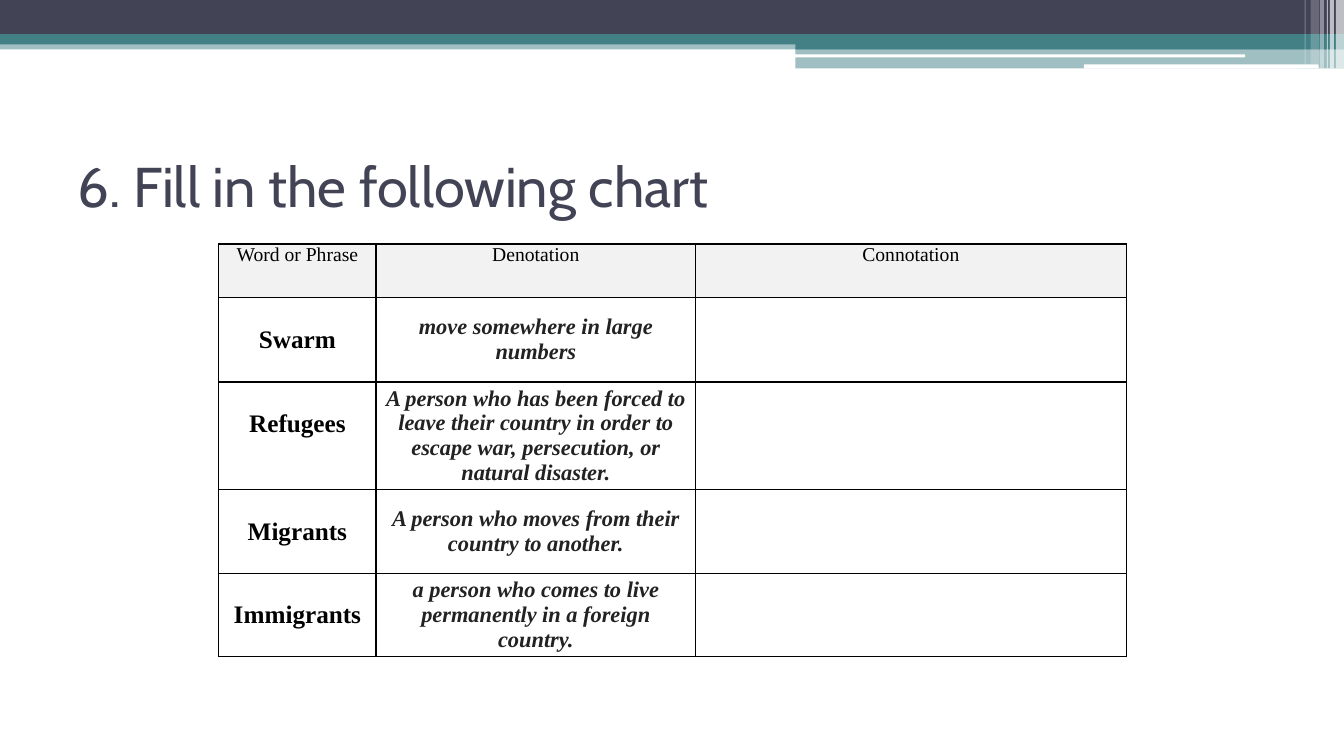
from lxml import etree
from pptx import Presentation
from pptx.dml.color import RGBColor
from pptx.enum.shapes import MSO_SHAPE
from pptx.enum.text import MSO_ANCHOR, PP_ALIGN
from pptx.oxml.ns import qn
from pptx.util import Inches, Pt

RECT, ROUNDED = MSO_SHAPE.RECTANGLE, MSO_SHAPE.ROUNDED_RECTANGLE
TOP, MIDDLE = MSO_ANCHOR.TOP, MSO_ANCHOR.MIDDLE
CENTER = PP_ALIGN.CENTER

GRID = Inches(0.01)
COLUMNS, ROWS = 1333, 750
COLORS = {"navy": "424456", "teal": "438086", "white": "FFFFFF",
          "black": "000000", "ink": "222222", "header": "F2F2F2"}
HEADING_FONT, TABLE_FONT = "Cabin", "Times New Roman"

STRIPES = [
    (0, 40, 1333, 9, "teal", 50),
    (0, 0, 1333, 34, "navy", 100),
    (0, 34, 1333, 10, "teal", 100),
    (789, 39, 544, 10, "teal", 100),
    (789, 48, 544, 20, "teal", 50),
]
HIGHLIGHTS = [(788, 54, 447, 3, "white", 100), (1075, 64, 233, 4, "white", 100)]
GLINTS = [(1325, 8, 68, 65), (1319, 4, 68, 65), (1316, 1, 68, 60),
          (1309, 4, 68, 40), (1300, 8, 64, 20), (1294, 1, 64, 30)]

HEADERS = ["Word or Phrase", "Denotation", "Connotation"]
VOCABULARY = [
    ("Swarm", "move somewhere in large numbers"),
    ("Refugees", "A person who has been forced to leave their country in order "
                 "to escape war, persecution, or natural disaster."),
    ("Migrants", "A person who moves from their country to another."),
    ("Immigrants", "a person who comes to live permanently in a foreign country."),
]
COLUMN_WIDTHS = [156, 317, 427]
ROW_HEIGHTS = [53, 84, 99, 83, 83]


def rgb(name):
    return RGBColor.from_string(COLORS[name])


def style(paragraph, font_name, size, color, bold=False, italic=False):
    font = paragraph.font
    font.name, font.size = font_name, Pt(size)
    font.bold, font.italic = bold, italic
    font.color.rgb = rgb(color)


def add_bar(slide, preset, left, top, width, height, color, opacity):
    bar = slide.shapes.add_shape(
        preset, left * GRID, top * GRID, width * GRID, height * GRID)
    bar.shadow.inherit = False
    bar.line.fill.background()
    bar.fill.solid()
    bar.fill.fore_color.rgb = rgb(color)
    if opacity < 100:
        tint = bar.fill._xPr.find(qn("a:solidFill"))[0]
        etree.SubElement(tint, qn("a:alpha"), val=str(opacity * 1000))


def add_banner(slide, left, top):
    glints = [(x, 0, width, height, "white", opacity)
              for x, width, height, opacity in GLINTS]
    for preset, bars in ((RECT, STRIPES), (ROUNDED, HIGHLIGHTS), (RECT, glints)):
        for x, y, *look in bars:
            add_bar(slide, preset, left + x, top + y, *look)


def add_heading(slide, left, top, width, height):
    heading = slide.shapes.add_textbox(
        left * GRID, top * GRID, width * GRID, height * GRID).text_frame
    heading.word_wrap = True
    heading.vertical_anchor = MIDDLE
    heading.text = "6. Fill in the following chart"
    style(heading.paragraphs[0], HEADING_FONT, 40, "navy")


def add_borders(cell):
    properties = cell._tc.get_or_add_tcPr()
    for side in ("lnL", "lnR", "lnT", "lnB"):
        edge = etree.SubElement(properties, qn(f"a:{side}"), w=str(Pt(1)))
        ink = etree.SubElement(edge, qn("a:solidFill"))
        etree.SubElement(ink, qn("a:srgbClr"), val=COLORS["black"])


def fill_cell(cell, text, anchor, margin_top, **look):
    cell.margin_left = cell.margin_right = 7 * GRID
    cell.margin_top, cell.margin_bottom = margin_top * GRID, 0
    cell.vertical_anchor = anchor
    cell.text = text
    paragraph = cell.text_frame.paragraphs[0]
    paragraph.alignment = CENTER
    style(paragraph, TABLE_FONT, **look)


def add_vocabulary(slide, left, top):
    table = slide.shapes.add_table(
        len(ROW_HEIGHTS), len(COLUMN_WIDTHS), left * GRID, top * GRID,
        sum(COLUMN_WIDTHS) * GRID, sum(ROW_HEIGHTS) * GRID).table
    table.first_row = table.horz_banding = False
    for column, width in zip(table.columns, COLUMN_WIDTHS):
        column.width = width * GRID
    for row, height in zip(table.rows, ROW_HEIGHTS):
        row.height = height * GRID
    for cell in table.iter_cells():
        add_borders(cell)
        cell.fill.background()
    for column, header in enumerate(HEADERS):
        cell = table.cell(0, column)
        cell.fill.solid()
        cell.fill.fore_color.rgb = rgb("header")
        fill_cell(cell, header, TOP, 0, size=14, color="black")
    for row, (word, denotation) in enumerate(VOCABULARY, start=1):
        fill_cell(table.cell(row, 0), word, TOP, 28,
                  size=18, color="black", bold=True)
        fill_cell(table.cell(row, 1), denotation, MIDDLE, 0,
                  size=16, color="ink", bold=True, italic=True)


def main():
    deck = Presentation()
    deck.slide_width, deck.slide_height = COLUMNS * GRID, ROWS * GRID
    slide = deck.slides.add_slide(deck.slide_layouts[6])
    add_banner(slide, 0, 0)
    add_heading(slide, 67, 125, 1200, 117)
    add_vocabulary(slide, 217, 242)
    deck.save("out.pptx")


if __name__ == "__main__":
    main()
